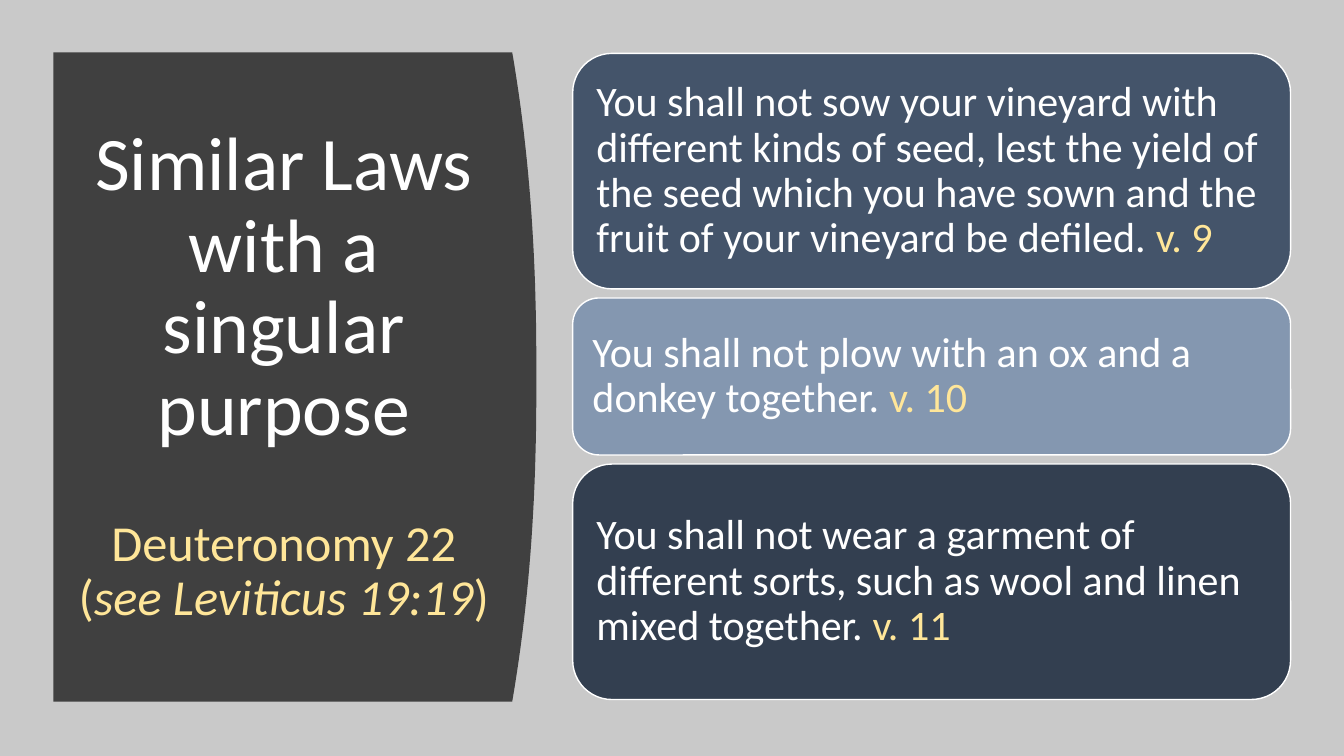
from pptx import Presentation
from pptx.dml.color import RGBColor
from pptx.enum.shapes import MSO_SHAPE
from pptx.enum.text import MSO_ANCHOR, MSO_AUTO_SIZE, PP_ALIGN
from pptx.util import Inches, Pt

ROUND = MSO_SHAPE.ROUNDED_RECTANGLE
MIDDLE = MSO_ANCHOR.MIDDLE
FIXED = MSO_AUTO_SIZE.NONE
LEFT, CENTER = PP_ALIGN.LEFT, PP_ALIGN.CENTER

GREY = RGBColor(0xC9, 0xC9, 0xC9)
DARK = RGBColor(0x40, 0x40, 0x40)
WHITE = RGBColor(0xFF, 0xFF, 0xFF)
GOLD = RGBColor(0xFF, 0xE6, 0x99)
SLATE = RGBColor(0x44, 0x54, 0x6A)
STEEL = RGBColor(0x84, 0x97, 0xB0)
NAVY = RGBColor(0x33, 0x3F, 0x50)

WIDE, HIGH = 13.33, 7.5
PANEL = (0.53, 0.52, 4.79, 6.44)
CARDS = (5.68, 0.53, 7.12, 6.41)
GAP = 0.09
BULGE = 0.05
STEPS = 48

LAWS = [
    (3, SLATE, "You shall not sow your vineyard with different kinds of seed, "
     "lest the yield of the seed which you have sown and the fruit of your "
     "vineyard be defiled. ", "v. 9"),
    (2, STEEL, "You shall not plow with an ox and a donkey together. ", "v. 10"),
    (3, NAVY, "You shall not wear a garment of different sorts, such as wool "
     "and linen mixed together. ", "v. 11"),
]


def set_all(item, values):
    """Set each named format value on an item."""
    for name, value in values.items():
        setattr(item, name, value)


def write(para, align, size, runs):
    """Fill a paragraph with (text, colour, italic) runs."""
    set_all(para, {"alignment": align, "line_spacing": 0.9})
    for text, color, slant in runs:
        for part, line in enumerate(text.split("\n")):
            if part:
                para.add_line_break()
            run = para.add_run()
            run.text = line
            set_all(run.font, {"name": "Calibri", "size": Pt(size),
                               "bold": False, "italic": slant})
            run.font.color.rgb = color


def add_panel(slide, box):
    """Draw the curved panel and set the title over it."""
    left, top, width, height = box
    edge = []
    for step in range(STEPS + 1):
        share = step / STEPS
        bend = BULGE * abs(2 * share - 1) ** 2.3
        edge.append((Inches(left + width * (1 - bend)),
                     Inches(top + height * share)))
    start, end = Inches(left), Inches(top + height)
    pen = slide.shapes.build_freeform(start, Inches(top))
    pen.add_line_segments(edge + [(start, end)], close=True)
    panel = pen.convert_to_shape()
    panel.shadow.inherit = False
    panel.fill.solid()
    panel.fill.fore_color.rgb = DARK
    panel.line.fill.background()

    title = slide.shapes.title
    panel._element.addnext(title._element)
    set_all(title, {"left": Inches(left + 0.05), "top": Inches(top + 0.59),
                    "width": Inches(width - 0.32),
                    "height": Inches(height - 1.2)})
    frame = title.text_frame
    set_all(frame, {"word_wrap": True, "auto_size": FIXED,
                    "vertical_anchor": MIDDLE})
    write(frame.paragraphs[0], CENTER, 54,
          [("Similar Laws\nwith a singular purpose", WHITE, False)])
    verse = frame.add_paragraph()
    verse.space_before = Pt(47)
    write(verse, CENTER, 36, [("Deuteronomy 22\n(", GOLD, False),
                              ("see Leviticus 19:19", GOLD, True),
                              (")", GOLD, False)])


def add_card(slide, box, color, law, verse):
    """Draw one rounded card with its law and verse."""
    card = slide.shapes.add_shape(ROUND, *map(Inches, box))
    card.shadow.inherit = False
    card.fill.solid()
    card.fill.fore_color.rgb = color
    card.line.color.rgb = WHITE
    card.line.width = Pt(1)
    frame = card.text_frame
    pad = Inches(0.12)
    set_all(frame, {"word_wrap": True, "vertical_anchor": MIDDLE,
                    "margin_left": pad, "margin_right": pad,
                    "margin_top": pad, "margin_bottom": pad})
    write(frame.paragraphs[0], LEFT, 30,
          [(law, WHITE, False), (verse, GOLD, False)])


def add_cards(slide, box):
    """Stack the law cards, sharing the height by weight."""
    left, top, width, height = box
    room = height - GAP * (len(LAWS) - 1)
    total = sum(law[0] for law in LAWS)
    for weight, color, law, verse in LAWS:
        tall = room * weight / total
        add_card(slide, (left, top, width, tall), color, law, verse)
        top += tall + GAP


def main():
    """Build and save the slide."""
    deck = Presentation()
    set_all(deck, {"slide_width": Inches(WIDE), "slide_height": Inches(HIGH)})
    slide = deck.slides.add_slide(deck.slide_layouts[5])
    slide.background.fill.solid()
    slide.background.fill.fore_color.rgb = GREY
    add_panel(slide, PANEL)
    add_cards(slide, CARDS)
    deck.save("out.pptx")


if __name__ == "__main__":
    main()
